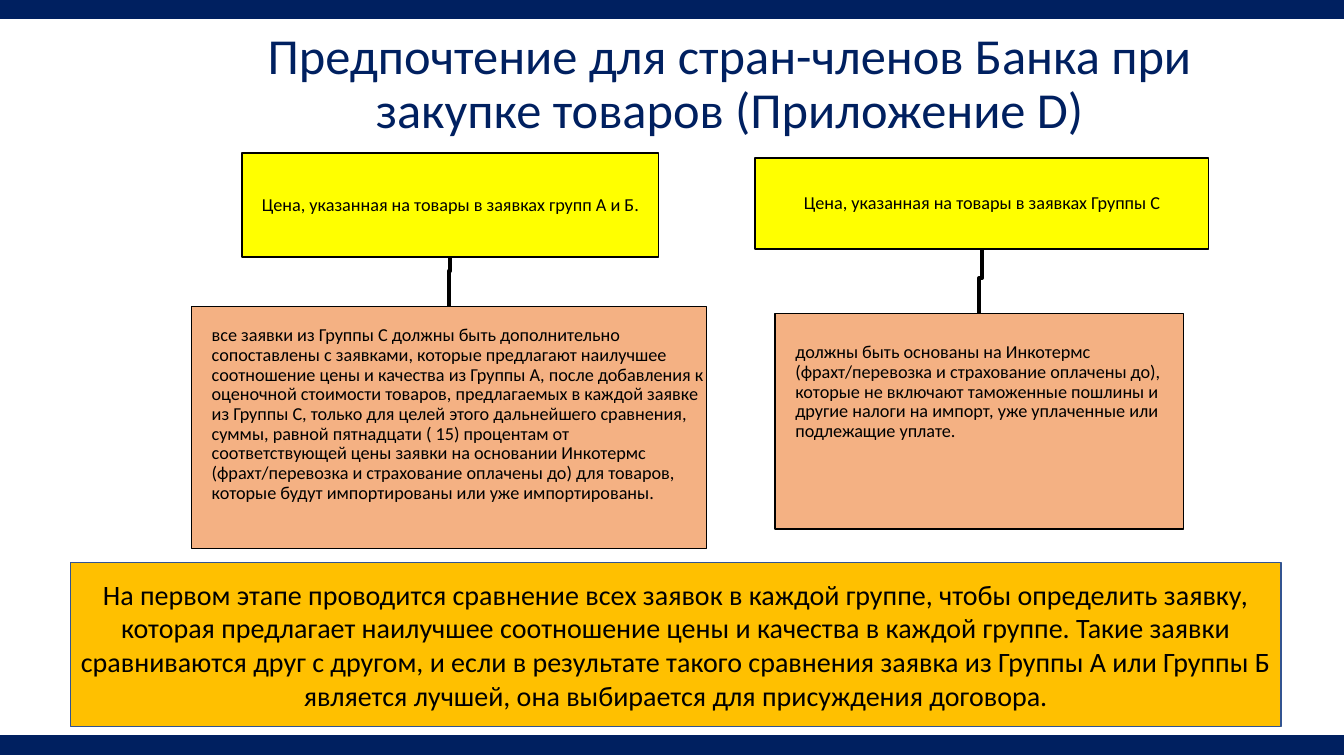
from dataclasses import dataclass

from pptx import Presentation
from pptx.dml.color import RGBColor
from pptx.enum.shapes import MSO_SHAPE
from pptx.enum.text import MSO_ANCHOR, MSO_AUTO_SIZE, PP_ALIGN
from pptx.shapes.autoshape import Shape
from pptx.slide import Slide
from pptx.text.text import TextFrame
from pptx.util import Inches, Pt

SLIDE_WIDTH = Inches(13.333)
SLIDE_HEIGHT = Inches(7.5)


@dataclass(frozen=True)
class Theme:
    font: str = "Calibri"
    navy: str = "002060"
    black: str = "000000"
    header: str = "FFFF00"
    body: str = "F4B183"
    banner: str = "FFC000"
    banner_line: str = "325491"
    title_size: float = 36
    banner_size: float = 20
    box_size: float = 13
    outline: float = 1
    link: float = 3


@dataclass(frozen=True)
class Area:
    """Shares of the slide, in percent."""
    left: float
    top: float
    width: float
    height: float

    @property
    def center(self) -> float:
        return self.left + self.width / 2

    @property
    def bottom(self) -> float:
        return self.top + self.height

    def place(self) -> tuple[int, int, int, int]:
        return (across(self.left), down(self.top),
                across(self.width), down(self.height))


@dataclass(frozen=True)
class Branch:
    header_area: Area
    header: str
    body_area: Area
    body: str
    body_inset: float
    bend: float


THEME = Theme()
BARS = [Area(0, 97.35, 100, 2.4), Area(0, 0, 100, 2.4)]
TITLE_AREA = Area(15.45, 4.93, 77.7, 12.67)
BANNER_AREA = Area(5.25, 74.4, 90.08, 21.73)
EDGE = 0.1
INDENT = 1.5

TITLE = "Предпочтение для стран-членов Банка при закупке товаров (Приложение D)"
BANNER = (
    "На первом этапе проводится сравнение всех заявок в каждой группе, чтобы "
    "определить заявку, которая предлагает наилучшее соотношение цены и качества "
    "в каждой группе. Такие заявки сравниваются друг с другом, и если в результате "
    "такого сравнения заявка из Группы А или Группы Б является лучшей, она "
    "выбирается для присуждения договора."
)
BRANCHES = [
    Branch(
        Area(18, 20.27, 31, 13.73),
        "Цена, указанная на товары в заявках групп А и Б.",
        Area(14.25, 40.53, 38.33, 32),
        "все заявки из Группы C должны быть дополнительно сопоставлены с заявками, "
        "которые предлагают наилучшее соотношение цены и качества из Группы A, после "
        "добавления к оценочной стоимости товаров, предлагаемых в каждой заявке из "
        "Группы C, только для целей этого дальнейшего сравнения, суммы, равной "
        "пятнадцати ( 15) процентам от соответствующей цены заявки на основании "
        "Инкотермс (фрахт/перевозка и страхование оплачены до) для товаров, которые "
        "будут импортированы или уже импортированы.",
        2.6, 0.28,
    ),
    Branch(
        Area(56.18, 20.93, 33.75, 12),
        "Цена, указанная на товары в заявках Группы С",
        Area(57.68, 41.47, 30.38, 28.53),
        "должны быть основаны на Инкотермс (фрахт/перевозка и страхование оплачены "
        "до), которые не включают таможенные пошлины и другие налоги на импорт, уже "
        "уплаченные или подлежащие уплате.",
        3.9, 0.45,
    ),
]


def across(share: float) -> int:
    return round(SLIDE_WIDTH * share / 100)


def down(share: float) -> int:
    return round(SLIDE_HEIGHT * share / 100)


def write(frame: TextFrame, text: str, *, size: float, color: str = THEME.black,
          align: PP_ALIGN = PP_ALIGN.CENTER, anchor: MSO_ANCHOR = MSO_ANCHOR.MIDDLE,
          spacing: float = 0.9) -> None:
    frame.word_wrap = True
    frame.auto_size = MSO_AUTO_SIZE.NONE
    frame.vertical_anchor = anchor
    para = frame.paragraphs[0]
    para.alignment = align
    para.line_spacing = spacing
    span = para.add_run()
    span.text = text
    span.font.name = THEME.font
    span.font.size = Pt(size)
    span.font.color.rgb = RGBColor.from_string(color)


def add_box(page: Slide, area: Area, fill: str, line: str) -> Shape:
    box = page.shapes.add_shape(MSO_SHAPE.RECTANGLE, *area.place())
    box.shadow.inherit = False
    box.fill.solid()
    box.fill.fore_color.rgb = RGBColor.from_string(fill)
    box.line.color.rgb = RGBColor.from_string(line)
    box.line.width = Pt(THEME.outline)
    return box


def set_insets(frame: TextFrame, left: float = EDGE, top: float = EDGE) -> None:
    frame.margin_left = across(left)
    frame.margin_right = across(EDGE)
    frame.margin_top = down(top)
    frame.margin_bottom = down(EDGE)


def add_link(page: Slide, branch: Branch) -> None:
    start, end = branch.header_area, branch.body_area
    start_x, end_x = across(start.center), across(end.center)
    bend_y = down(start.bottom + (end.top - start.bottom) * branch.bend)
    builder = page.shapes.build_freeform(start_x, down(start.bottom))
    builder.add_line_segments(
        [(start_x, bend_y), (end_x, bend_y), (end_x, down(end.top))], close=False)
    link = builder.convert_to_shape()
    link.shadow.inherit = False
    link.fill.background()
    link.line.color.rgb = RGBColor.from_string(THEME.black)
    link.line.width = Pt(THEME.link)


def add_branch(page: Slide, branch: Branch) -> None:
    add_link(page, branch)
    header = add_box(page, branch.header_area, THEME.header, THEME.black)
    set_insets(header.text_frame)
    write(header.text_frame, branch.header, size=THEME.box_size)
    body = add_box(page, branch.body_area, THEME.body, THEME.black)
    set_insets(body.text_frame, left=INDENT, top=branch.body_inset)
    write(body.text_frame, branch.body, size=THEME.box_size,
          align=PP_ALIGN.LEFT, anchor=MSO_ANCHOR.TOP)


def main() -> None:
    deck = Presentation()
    deck.slide_width, deck.slide_height = SLIDE_WIDTH, SLIDE_HEIGHT
    page = deck.slides.add_slide(deck.slide_layouts.get_by_name("Title Only"))
    title = page.shapes.title
    title.left, title.top, title.width, title.height = TITLE_AREA.place()
    write(title.text_frame, TITLE, size=THEME.title_size, color=THEME.navy)
    for bar in BARS:
        add_box(page, bar, THEME.navy, THEME.navy)
    for branch in BRANCHES:
        add_branch(page, branch)
    banner = add_box(page, BANNER_AREA, THEME.banner, THEME.banner_line)
    write(banner.text_frame, BANNER, size=THEME.banner_size, spacing=1.0)
    deck.save("out.pptx")


if __name__ == "__main__":
    main()
